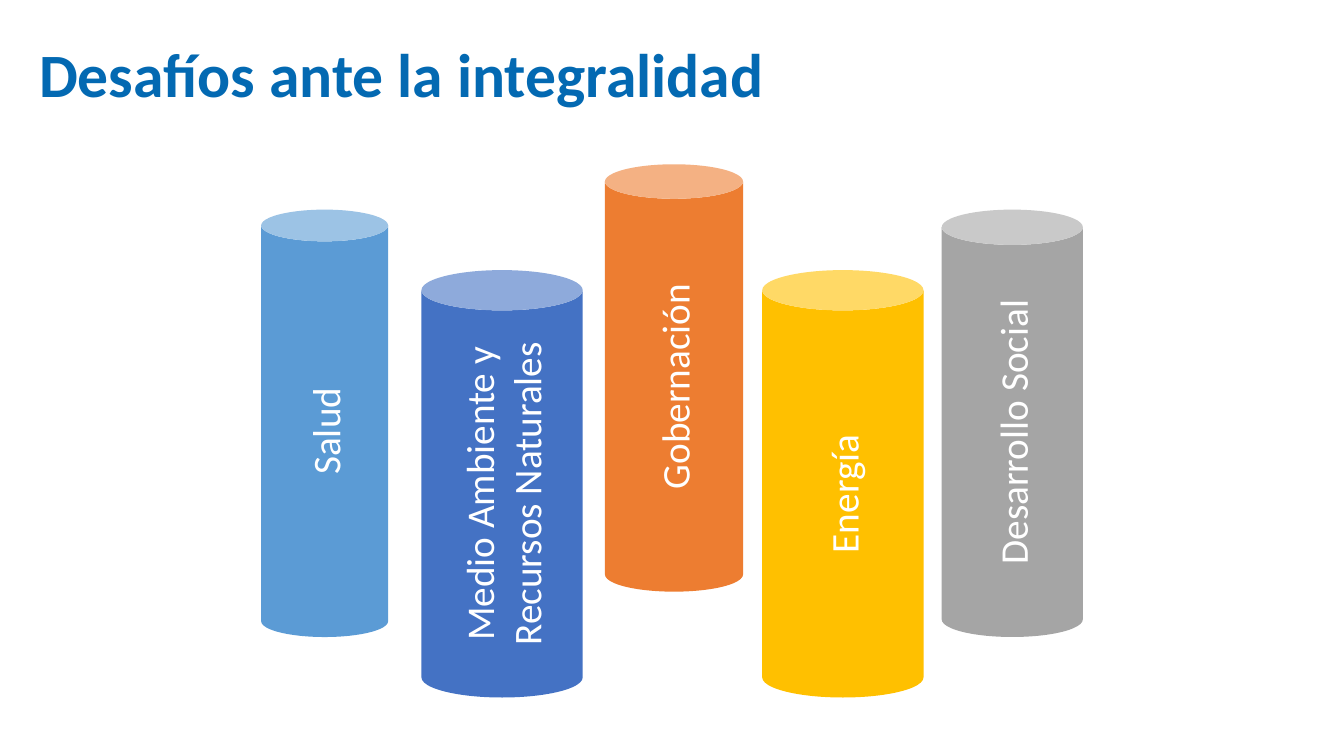
from dataclasses import dataclass

import pptx
import pptx.dml.color
import pptx.enum.shapes
import pptx.enum.text
import pptx.util
from pptx.util import Inches


@dataclass(frozen=True)
class Theme:
    font: str = "Calibri"
    title_size: int = 44
    label_size: int = 28
    title: str = "0369B2"
    label: str = "FFFFFF"
    health: str = "5B9BD5"
    environment: str = "4472C4"
    government: str = "ED7D31"
    energy: str = "FFC000"
    social: str = "A5A5A5"


THEME = Theme()
PILLAR_HEIGHT = 4.24

# label, left, top, width, fill
PILLARS = [
    ("Gobernación", 6.0, 1.63, 1.37, THEME.government),
    ("Desarrollo Social", 9.34, 2.08, 1.4, THEME.social),
    ("Energía", 7.56, 2.68, 1.6, THEME.energy),
    ("Salud", 2.59, 2.08, 1.26, THEME.health),
    ("Medio Ambiente y Recursos Naturales", 4.18, 2.68, 1.6, THEME.environment),
]


def rgb(color):
    return pptx.dml.color.RGBColor.from_string(color)


def write_text(shape, text, size, color, bold=False):
    """Fill the shape with one formatted paragraph and return it."""
    shape.text_frame.word_wrap = True
    para = shape.text_frame.paragraphs[0]
    para.text = text
    for span in para.runs:
        span.font.name = THEME.font
        span.font.size = pptx.util.Pt(size)
        span.font.bold = bold
        span.font.color.rgb = rgb(color)
    return para


def add_title(page, text):
    box = page.shapes.add_textbox(Inches(0.29), Inches(0.39), Inches(12.04), Inches(0.96))
    para = write_text(box, text, THEME.title_size, THEME.title, bold=True)
    para.line_spacing = 0.9


def add_pillar(group, label, left, top, width, fill):
    """Add a cylinder whose label reads from bottom to top."""
    pillar = group.shapes.add_shape(
        pptx.enum.shapes.MSO_SHAPE.CAN,
        Inches(left), Inches(top), Inches(width), Inches(PILLAR_HEIGHT),
    )
    pillar.shadow.inherit = False
    pillar.fill.solid()
    pillar.fill.fore_color.rgb = rgb(fill)
    pillar.line.fill.background()
    para = write_text(pillar, label, THEME.label_size, THEME.label)
    para.alignment = pptx.enum.text.PP_ALIGN.CENTER
    pillar.text_frame.vertical_anchor = pptx.enum.text.MSO_ANCHOR.MIDDLE
    pillar.element.txBody.bodyPr.set("vert", "vert270")


def main():
    deck = pptx.Presentation()
    deck.slide_width = Inches(13.33)
    deck.slide_height = Inches(7.5)
    page = deck.slides.add_slide(deck.slide_layouts[6])
    group = page.shapes.add_group_shape()
    for pillar in PILLARS:
        add_pillar(group, *pillar)
    add_title(page, "Desafíos ante la integralidad")
    deck.save("out.pptx")


if __name__ == "__main__":
    main()
